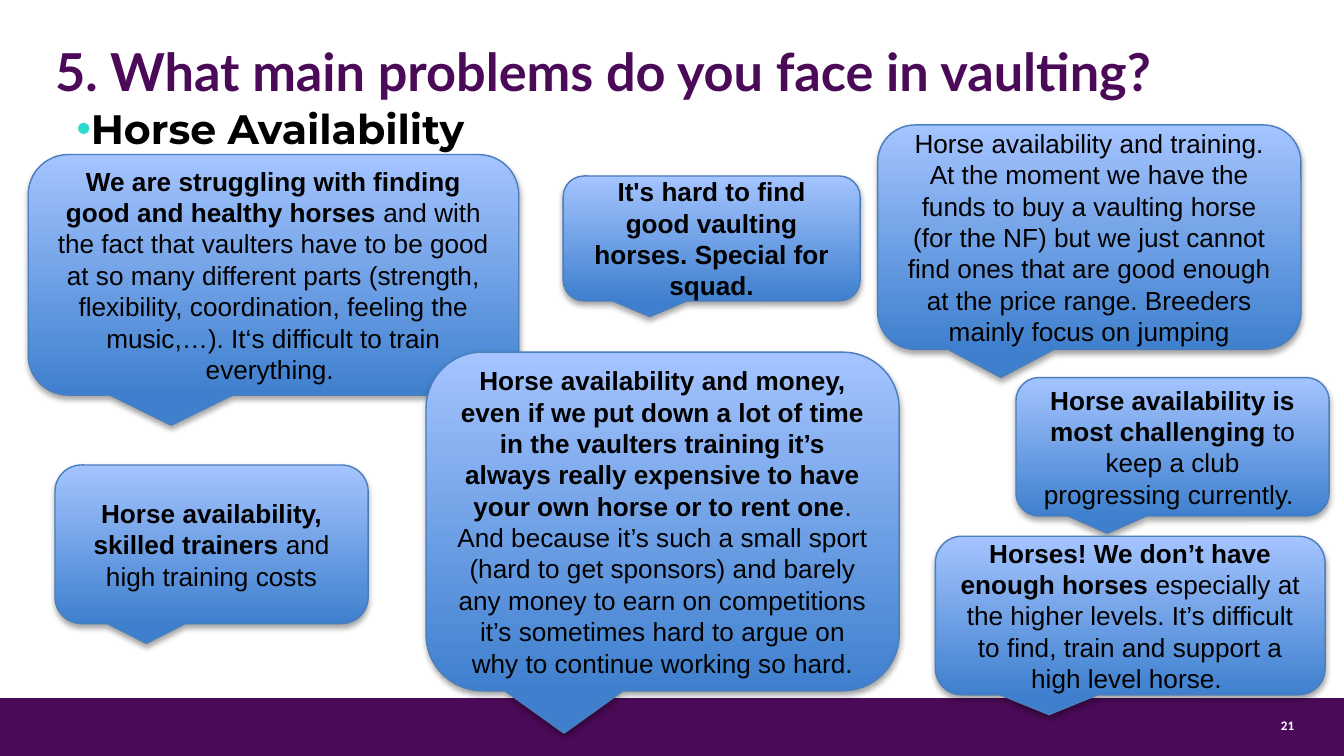
from dataclasses import dataclass

from lxml import etree
from pptx import Presentation
from pptx.dml.color import RGBColor
from pptx.enum.shapes import MSO_SHAPE as Shape
from pptx.enum.text import MSO_ANCHOR as Anchor, MSO_AUTO_SIZE as AutoSize, PP_ALIGN as Align
from pptx.oxml.ns import qn
from pptx.util import Inches, Pt


@dataclass(frozen=True)
class Theme:
    purple: str = "4B0A57"
    teal: str = "2CDACE"
    black: str = "000000"
    white: str = "FFFFFF"
    callout_low: str = "3F80CE"
    callout_high: str = "A4C4FF"
    callout_line: str = "4B7EBC"
    title_size: int = 28
    heading_size: int = 22
    quote_size: int = 14
    number_size: int = 7


T = Theme()

# Widescreen, 16:9
SLIDE_W = Inches(10)
SLIDE_H = SLIDE_W * 9 // 16

# Left, top, width, height, bold opening, plain remainder
QUOTES = [
    (0.21, 1.15, 3.65, 1.79, "We are struggling with finding good and healthy horses",
     " and with the fact that vaulters have to be good at so many different parts "
     "(strength, flexibility, coordination, feeling the music,…). "
     "It‘s difficult to train everything. "),
    (6.53, 0.93, 3.15, 1.67, "",
     "Horse availability and training. At the moment we have the funds to buy a "
     "vaulting horse (for the NF) but we just cannot find ones that are good enough "
     "at the price range. Breeders mainly focus on jumping"),
    (7.56, 2.81, 2.33, 1.03, "Horse availability is most challenging ",
     "to keep a club progressing currently. "),
    (6.96, 3.99, 2.9, 1.18, "Horses! We don’t have enough horses",
     " especially at the higher levels. It’s difficult to find, train and support "
     "a high level horse. "),
    (3.17, 2.62, 3.52, 2.52,
     "Horse availability and money, even if we put down a lot of time in the vaulters "
     "training it’s always really expensive to have your own horse or to rent one",
     ". And because it’s such a small sport (hard to get sponsors) and barely any money "
     "to earn on competitions it’s sometimes hard to argue on why to continue working "
     "so hard."),
    (4.19, 1.31, 2.21, 0.93, "It's hard to find good vaulting horses. Special for squad.", ""),
    (0.41, 3.46, 2.33, 1.18, "Horse availability, skilled trainers ",
     "and high training costs"),
]


def rgb(color):
    return RGBColor.from_string(color)


def place(sp, left, top, width, height):
    sp.left, sp.top = Inches(left), Inches(top)
    sp.width, sp.height = Inches(width), Inches(height)


def add_run(p, text, font, size, color, bold=True):
    r = p.add_run()
    r.text = text
    r.font.name, r.font.size, r.font.bold = font, Pt(size), bold
    r.font.color.rgb = rgb(color)


def setup_frame(sp, anchor=Anchor.TOP, side=0.1):
    tf = sp.text_frame
    tf.word_wrap = True
    tf.auto_size = AutoSize.NONE
    tf.vertical_anchor = anchor
    tf.margin_left = tf.margin_right = Inches(side)
    tf.margin_top = tf.margin_bottom = Inches(0.05)
    return tf


def add_footer(s):
    height = Inches(0.43)
    bar = s.shapes.add_shape(Shape.RECTANGLE, 0, SLIDE_H - height, SLIDE_W, height)
    bar.shadow.inherit = False
    bar.fill.solid()
    bar.fill.fore_color.rgb = rgb(T.purple)
    bar.line.fill.background()
    number = s.shapes.add_textbox(Inches(9.49), Inches(5.29), Inches(0.18), Inches(0.23))
    p = setup_frame(number, side=0).paragraphs[0]
    p.alignment = Align.CENTER
    add_run(p, "21", "Calibri", T.number_size, T.white)


def set_title(s, text):
    sp = s.shapes.title
    place(sp, 0.41, 0.24, 9.17, 0.54)
    p = setup_frame(sp, side=0).paragraphs[0]
    p.alignment = Align.LEFT
    p.line_spacing = Pt(34)
    add_run(p, text, "Lato", T.title_size, T.purple)


def set_heading(s, text):
    sp = s.placeholders[1]
    place(sp, 0.47, 0.72, 9.17, 3.79)
    p = setup_frame(sp).paragraphs[0]
    p.space_before = Pt(0)
    # Teal bullet
    pPr = p._p.get_or_add_pPr()
    pPr.set("marL", "0")
    pPr.set("indent", str(-Inches(0.2)))
    color = etree.SubElement(pPr, qn("a:buClr"))
    etree.SubElement(color, qn("a:srgbClr"), val=T.teal)
    etree.SubElement(pPr, qn("a:buChar"), char="•")
    add_run(p, text, "Montserrat", T.heading_size, T.black)


def add_shadow(sp):
    sp.shadow.inherit = False
    effects = sp._element.spPr.find(qn("a:effectLst"))
    shadow = etree.SubElement(effects, qn("a:outerShdw"), blurRad=str(Pt(3.1)),
                              dist=str(Pt(1.8)), dir="5400000", rotWithShape="0")
    color = etree.SubElement(shadow, qn("a:srgbClr"), val=T.black)
    etree.SubElement(color, qn("a:alpha"), val="35000")


def add_quote(s, left, top, width, height, strong, plain):
    sp = s.shapes.add_shape(Shape.ROUNDED_RECTANGULAR_CALLOUT, Inches(left), Inches(top),
                            Inches(width), Inches(height))
    sp.fill.gradient()
    sp.fill.gradient_angle = 90
    for stop, color in zip(sp.fill.gradient_stops, (T.callout_low, T.callout_high)):
        stop.color.rgb = rgb(color)
    sp.line.color.rgb = rgb(T.callout_line)
    sp.line.width = Pt(0.75)
    add_shadow(sp)
    p = setup_frame(sp, Anchor.MIDDLE).paragraphs[0]
    p.alignment = Align.CENTER
    for text, bold in ((strong, True), (plain, False)):
        if text:
            add_run(p, text, "Arial", T.quote_size, T.black, bold)


def main():
    prs = Presentation()
    prs.slide_width, prs.slide_height = SLIDE_W, SLIDE_H
    s = prs.slides.add_slide(prs.slide_layouts[1])
    # Footer, then headings
    add_footer(s)
    set_title(s, "5. What main problems do you face in vaulting?")
    set_heading(s, "Horse Availability")
    # Survey answers
    for quote in QUOTES:
        add_quote(s, *quote)
    prs.save("out.pptx")


if __name__ == "__main__":
    main()
